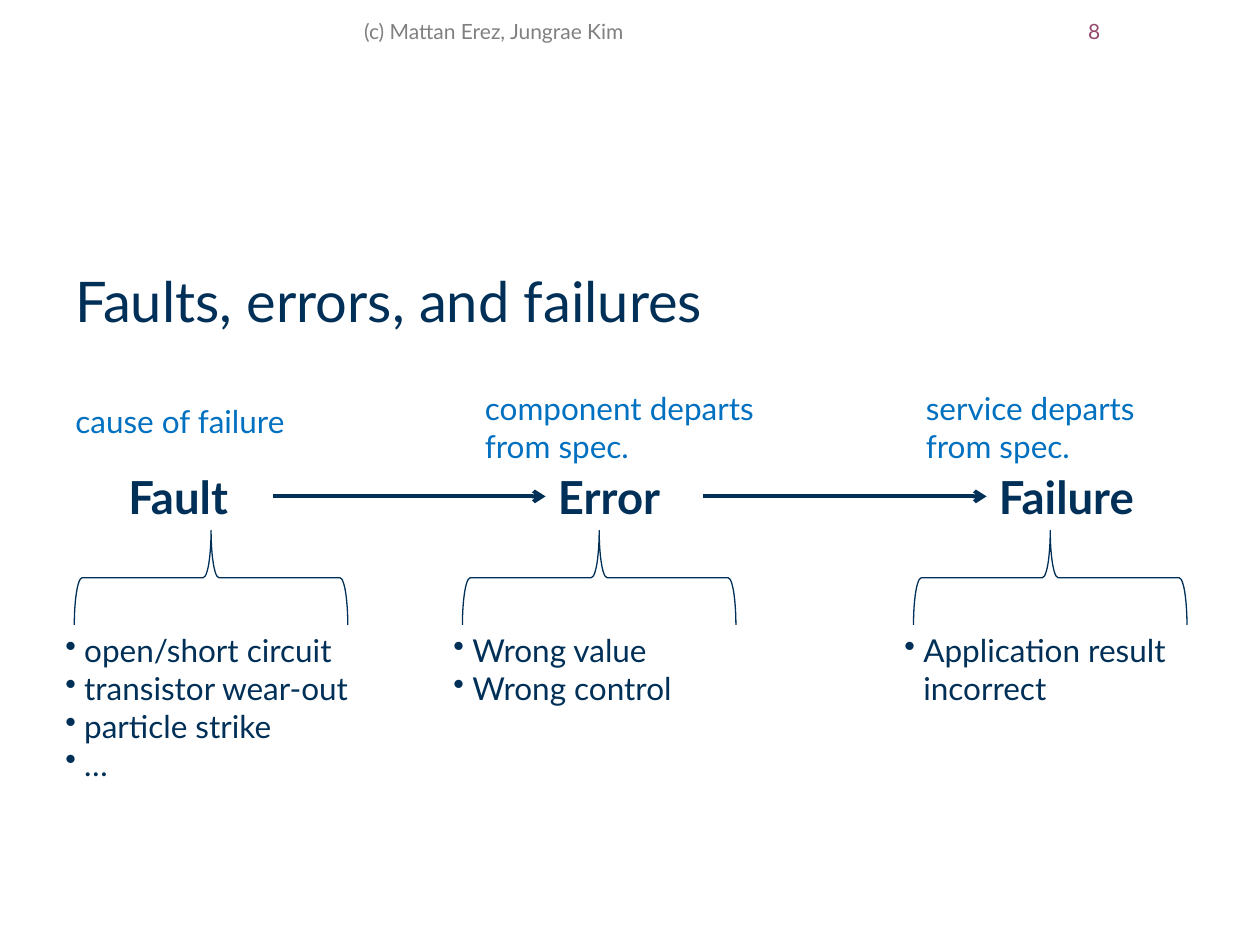
from dataclasses import dataclass

from lxml import etree
from pptx import Presentation
from pptx import util as u
from pptx.dml.color import RGBColor
from pptx.enum import shapes, text
from pptx.oxml.ns import qn


@dataclass(frozen=True)
class Theme:
    font: str = "Lato"
    navy: str = "003057"
    blue: str = "0070C0"
    gray: str = "808080"
    plum: str = "94476B"
    title: int = 32
    stage: int = 26
    body: int = 18
    small: int = 12


@dataclass(frozen=True)
class Stage:
    name: str
    name_left: float
    name_width: float
    caption: str
    caption_left: float
    caption_top: float
    caption_width: float
    list_left: float
    examples: tuple


THEME = Theme()
STAGES = (
    Stage("Fault", 0.92, 1.25, "cause of failure", 0.5, 3.14, 2.17, 0.42,
          ("open/short circuit", "transistor wear-out", "particle strike", "…")),
    Stage("Error", 4.33, 1.25, "component departs from spec.", 3.75, 3.04, 2.58, 3.5,
          ("Wrong value", "Wrong control")),
    Stage("Failure", 7.83, 1.58, "service departs from spec.", 7.25, 3.04, 2.17, 7.08,
          ("Application result\vincorrect",)),
)


def add_bullet(para):
    props = para._p.get_or_add_pPr()
    indent = u.Inches(0.15)
    props.set("marL", str(indent))
    props.set("indent", str(-indent))
    etree.SubElement(props, qn("a:buChar")).set("char", "•")


def add_text(page, place, lines, size, color, bold=False, bullets=False,
             align=text.PP_ALIGN.LEFT, anchor=text.MSO_ANCHOR.TOP):
    box = page.shapes.add_textbox(*map(u.Inches, place))
    frame = box.text_frame
    frame.word_wrap = True
    frame.vertical_anchor = anchor
    for index, line in enumerate(lines):
        para = frame.add_paragraph() if index else frame.paragraphs[0]
        para.text = line
        para.alignment = align
        if bullets:
            add_bullet(para)
        para.font.name = THEME.font
        para.font.size = u.Pt(size)
        para.font.bold = bold
        para.font.color.rgb = RGBColor.from_string(color)
    return box


def add_arrow(page, source, target):
    arrow = page.shapes.add_connector(shapes.MSO_CONNECTOR.STRAIGHT, 0, 0, 0, 0)
    arrow.begin_connect(source, 3)
    arrow.end_connect(target, 1)
    arrow.line.width = u.Pt(2.25)
    arrow.line.color.rgb = RGBColor.from_string(THEME.navy)
    line = arrow.line._get_or_add_ln()
    etree.SubElement(line, qn("a:tailEnd")).set("type", "arrow")
    etree.SubElement(arrow._element.spPr, qn("a:effectLst"))


def add_brace(page, left):
    brace = page.shapes.add_shape(
        shapes.MSO_SHAPE.LEFT_BRACE,
        u.Inches(left), u.Inches(3.5), u.Inches(0.75), u.Inches(2.17))
    brace.rotation = 90
    brace.shadow.inherit = False
    brace.fill.background()
    brace.line.width = u.Pt(0.75)
    brace.line.color.rgb = RGBColor.from_string(THEME.navy)


def add_stage(page, stage):
    add_text(page, (stage.caption_left, stage.caption_top, stage.caption_width, 0.4),
             [stage.caption], THEME.body, THEME.blue)
    add_brace(page, stage.list_left + 0.88)
    add_text(page, (stage.list_left, 4.96, 2.58, 1.31), stage.examples,
             THEME.body, THEME.navy, bullets=True)
    return add_text(page, (stage.name_left, 3.67, stage.name_width, 0.54),
                    [stage.name], THEME.stage, THEME.navy, bold=True)


def main():
    deck = Presentation()
    deck.slide_width, deck.slide_height = u.Inches(10), u.Inches(7.5)
    page = deck.slides.add_slide(deck.slide_layouts[6])
    middle = text.MSO_ANCHOR.MIDDLE

    add_text(page, (0.92, 0, 6, 0.5), ["(c) Mattan Erez, Jungrae Kim"],
             THEME.small, THEME.gray, align=text.PP_ALIGN.CENTER, anchor=middle)
    add_text(page, (7.92, 0, 0.91, 0.5), ["8"],
             THEME.small, THEME.plum, align=text.PP_ALIGN.RIGHT, anchor=middle)
    add_text(page, (0.5, 2.03, 9.33, 0.7), ["Faults, errors, and failures"],
             THEME.title, THEME.navy, anchor=middle)

    names = [add_stage(page, stage) for stage in STAGES]
    for source, target in zip(names, names[1:]):
        add_arrow(page, source, target)
    deck.save("out.pptx")


if __name__ == "__main__":
    main()
